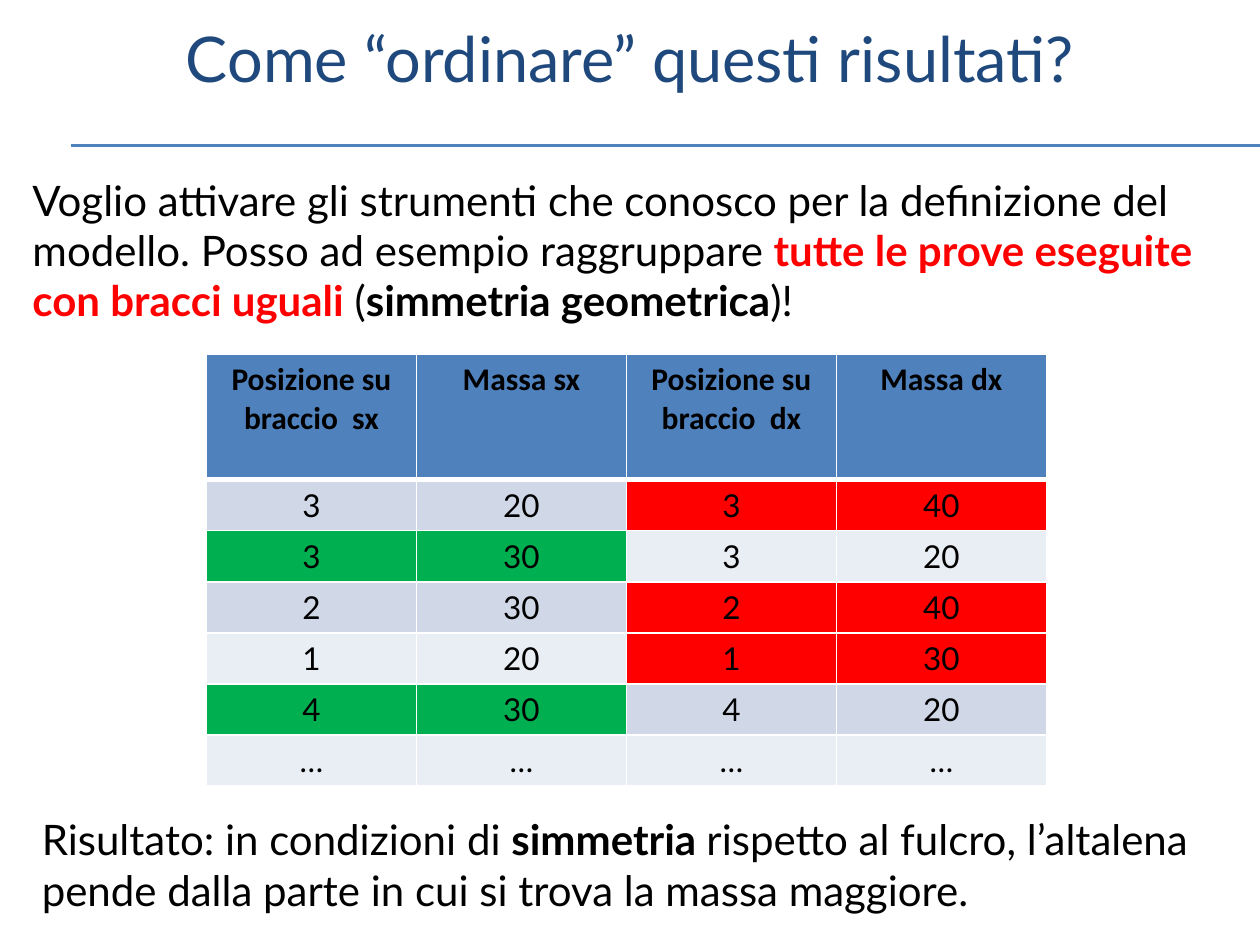
from lxml.etree import SubElement
from pptx import Presentation
from pptx.dml.color import RGBColor
from pptx.enum.shapes import MSO_CONNECTOR
from pptx.enum.text import MSO_ANCHOR, PP_ALIGN
from pptx.oxml.ns import qn
from pptx.util import Pt

COLORS = {
    "title": "1F497D", "accent": "4F81BD", "text": "000000", "white": "FFFFFF",
    "right": "FF0000", "left": "00B050", "band_dark": "D0D8E8", "band_light": "E9EDF4",
}
HEADERS = ["Posizione su braccio  sx", "Massa sx", "Posizione su braccio  dx", "Massa dx"]
TRIALS = [(3, 20, 3, 40), (3, 30, 3, 20), (2, 30, 2, 40), (1, 20, 1, 30), (4, 30, 4, 20)]
COLUMN_WIDTH, HEADER_HEIGHT, ROW_HEIGHT = 120, 71.6, 29.2


def rgb(name):
    return RGBColor.from_string(COLORS[name])


def add_run(paragraph, text, size, color="text", bold=False, font="Lato"):
    run = paragraph.add_run()
    run.text = text
    run.font.name = font
    run.font.size = Pt(size)
    run.font.bold = bold
    run.font.color.rgb = rgb(color)


def add_text(slide, left, top, width, height, runs, size=24,
             align=PP_ALIGN.LEFT, anchor=MSO_ANCHOR.TOP):
    box = slide.shapes.add_textbox(Pt(left), Pt(top), Pt(width), Pt(height))
    frame = box.text_frame
    frame.word_wrap = True
    frame.vertical_anchor = anchor
    paragraph = frame.paragraphs[0]
    paragraph.alignment = align
    for text, color, bold in runs:
        add_run(paragraph, text, size, color, bold)


def add_rule(slide, y):
    rule = slide.shapes.add_connector(MSO_CONNECTOR.STRAIGHT, Pt(40.5), Pt(y), Pt(720), Pt(y))
    rule.line.color.rgb = rgb("accent")
    rule.line.width = Pt(0.75)
    SubElement(rule._element.spPr, qn("a:effectLst"))


def set_borders(cell, widths):
    properties = cell._tc.get_or_add_tcPr()
    for side, width in zip("LRTB", widths):
        border = SubElement(properties, qn(f"a:ln{side}"), w=str(Pt(width)))
        fill = SubElement(border, qn("a:solidFill"))
        SubElement(fill, qn("a:srgbClr"), val=COLORS["white"])


def fill_cell(cell, text, fill, borders, bold=False, font="Lato"):
    set_borders(cell, borders)
    cell.fill.solid()
    cell.fill.fore_color.rgb = rgb(fill)
    paragraph = cell.text_frame.paragraphs[0]
    paragraph.alignment = PP_ALIGN.CENTER
    add_run(paragraph, text, 18, "text", bold, font)


def trial_fills(trial, band):
    """Highlight the side that carries the larger mass."""
    _, left_mass, _, right_mass = trial
    left = "left" if left_mass > right_mass else band
    right = "right" if right_mass > left_mass else band
    return [left, left, right, right]


def add_trials_table(slide, left, top):
    row_count = len(TRIALS) + 2
    table = slide.shapes.add_table(
        row_count, len(HEADERS), Pt(left), Pt(top), Pt(COLUMN_WIDTH * len(HEADERS)),
        Pt(HEADER_HEIGHT + ROW_HEIGHT * (row_count - 1))).table
    for column in table.columns:
        column.width = Pt(COLUMN_WIDTH)
    for index, row in enumerate(table.rows):
        row.height = Pt(ROW_HEIGHT if index else HEADER_HEIGHT)

    # Header
    for column, header in enumerate(HEADERS):
        fill_cell(table.cell(0, column), header, "accent", (1, 1, 1, 3), True, "Calibri")

    # Trials, then a closing row of dots
    bands = ["band_light", "band_dark"]
    rows = [(trial, trial_fills(trial, bands[number % 2]))
            for number, trial in enumerate(TRIALS, 1)]
    rows.append((["…"] * 4, ["band_light"] * 4))
    for number, (values, fills) in enumerate(rows, 1):
        borders = (1, 1, 3 if number == 1 else 1, 1)
        for column, (value, fill) in enumerate(zip(values, fills)):
            fill_cell(table.cell(number, column), str(value), fill, borders)


def main():
    deck = Presentation()
    deck.slide_width, deck.slide_height = Pt(720), Pt(540)
    slide = deck.slides.add_slide(deck.slide_layouts[6])

    # Title and double rule
    for y in (82.8, 83.5):
        add_rule(slide, y)
    add_text(slide, 0, 0, 720, 66, [("Come “ordinare” questi risultati?", "title", False)],
             36, PP_ALIGN.CENTER, MSO_ANCHOR.MIDDLE)

    # Introduction
    add_text(slide, 11.5, 96, 720, 94.5, [
        ("Voglio attivare gli strumenti che conosco per la definizione del modello. "
         "Posso ad esempio raggruppare ", "text", False),
        ("tutte le prove eseguite con bracci uguali", "right", True),
        (" (", "text", False),
        ("simmetria geometrica", "text", True),
        (")!", "text", False),
    ])

    # Results
    add_trials_table(slide, 118, 202.5)

    # Conclusion
    add_text(slide, 16.8, 461.5, 692, 65.5, [
        ("Risultato: in condizioni di ", "text", False),
        ("simmetria ", "text", True),
        ("rispetto al fulcro, l’altalena pende dalla parte in cui si trova "
         "la massa maggiore.", "text", False),
    ])
    deck.save("out.pptx")


if __name__ == "__main__":
    main()
